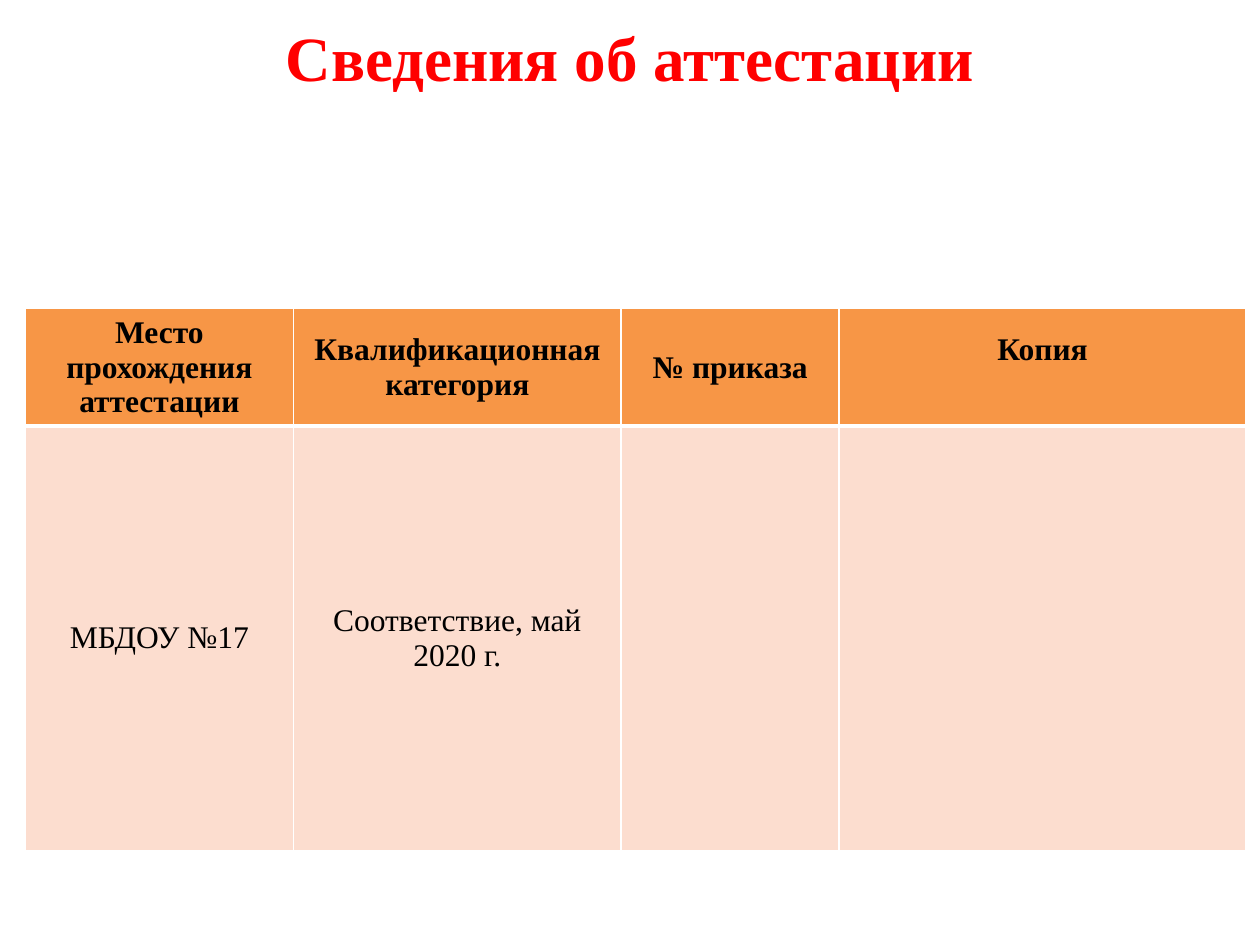
from lxml.etree import SubElement
from pptx import Presentation
from pptx.dml.color import RGBColor
from pptx.enum.text import MSO_ANCHOR, PP_ALIGN
from pptx.oxml.ns import qn
from pptx.util import Inches, Pt

RED = RGBColor(0xFF, 0x00, 0x00)
BLACK = RGBColor(0x00, 0x00, 0x00)
WHITE = RGBColor(0xFF, 0xFF, 0xFF)
ORANGE = RGBColor(0xF7, 0x96, 0x46)
PEACH = RGBColor(0xFC, 0xDD, 0xCF)

TITLE_ONLY = 5
COLUMN_WIDTHS = (2.13, 2.6, 1.73, 3.23)
ROW_HEIGHTS = (0.92, 3.37)
ATTESTATION = (
    ("Место прохождения аттестации", "Квалификационная категория", "№ приказа", "Копия"),
    ("МБДОУ №17", "Соответствие, май 2020 г.", "", ""),
)


def write(frame, text, size=18, color=BLACK, bold=False):
    frame.word_wrap = True
    paragraph = frame.paragraphs[0]
    paragraph.alignment = PP_ALIGN.CENTER
    font = paragraph.font
    if text:
        run = paragraph.add_run()
        run.text = text
        font = run.font
    font.name = "Times New Roman"
    font.size = Pt(size)
    font.bold = bold
    font.color.rgb = color


def set_borders(cell, widths):
    """Draw white borders; widths maps a side (L, R, T, B) to points."""
    properties = cell._tc.get_or_add_tcPr()
    for position, side in enumerate("LRTB"):
        line = SubElement(properties, qn(f"a:ln{side}"), w=str(Pt(widths[side])))
        fill = SubElement(line, qn("a:solidFill"))
        SubElement(fill, qn("a:srgbClr"), val=str(WHITE))
        # The schema wants borders ahead of the cell fill
        properties.insert(position, line)


class AttestationSlide:
    def __init__(self, presentation):
        self.slide = presentation.slides.add_slide(presentation.slide_layouts[TITLE_ONLY])
        self.slide.background.fill.solid()
        self.slide.background.fill.fore_color.rgb = WHITE

    def title(self, text):
        heading = self.slide.shapes.title
        heading.left, heading.top = Inches(0), Inches(0.05)
        heading.width, heading.height = Inches(10), Inches(0.86)
        frame = heading.text_frame
        frame.vertical_anchor = MSO_ANCHOR.TOP
        frame.margin_top = Inches(0.1)
        write(frame, text, size=36, color=RED, bold=True)

    def table(self, left, top, rows):
        table = self.slide.shapes.add_table(
            len(rows), len(COLUMN_WIDTHS), Inches(left), Inches(top),
            Inches(sum(COLUMN_WIDTHS)), Inches(sum(ROW_HEIGHTS))).table
        for column, width in zip(table.columns, COLUMN_WIDTHS):
            column.width = Inches(width)
        for index, (row, height, texts) in enumerate(zip(table.rows, ROW_HEIGHTS, rows)):
            row.height = Inches(height)
            header = index == 0
            for cell, text in zip(row.cells, texts):
                cell.fill.solid()
                cell.fill.fore_color.rgb = ORANGE if header else PEACH
                cell.vertical_anchor = MSO_ANCHOR.MIDDLE
                write(cell.text_frame, text, bold=header)
                set_borders(cell, {"L": 1, "R": 1, "T": 1 if header else 3,
                                   "B": 3 if header else 1})
        return table


def main():
    presentation = Presentation()
    presentation.slide_width, presentation.slide_height = Inches(10), Inches(7.5)
    page = AttestationSlide(presentation)
    page.title("Сведения об аттестации")
    attestation = page.table(0.2, 2.45, ATTESTATION)
    # The last heading sits half a line above the middle
    attestation.cell(0, 3).margin_bottom = Inches(0.33)
    presentation.save("out.pptx")


if __name__ == "__main__":
    main()
